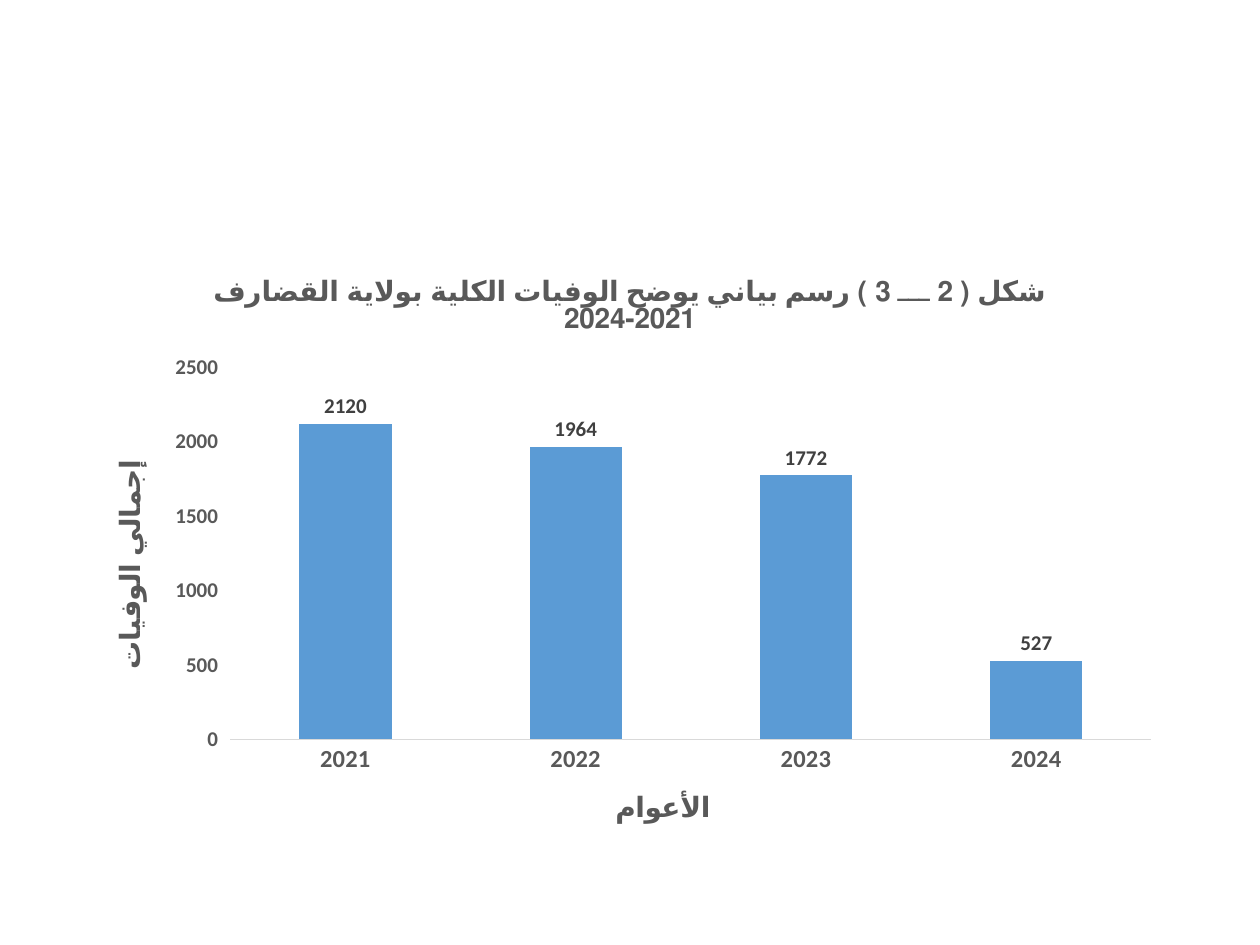
from pptx import Presentation
from pptx.chart.data import CategoryChartData
from pptx.dml.color import RGBColor
from pptx.enum.chart import XL_CHART_TYPE, XL_LABEL_POSITION, XL_TICK_MARK
from pptx.util import Inches, Pt


def style(font, size, color):
    font.name = "Calibri"
    font.size = Pt(size)
    font.bold = True
    font.color.rgb = RGBColor.from_string(color)


def label(title, text):
    para = title.text_frame.paragraphs[0]
    para.text = text
    para._p.get_or_add_pPr().set("rtl", "1")
    style(para.font, 16, "595959")
    style(para.runs[0].font, 16, "595959")


deck = Presentation()
deck.slide_width = Inches(10)
deck.slide_height = Inches(7.5)
slide = deck.slides.add_slide(deck.slide_layouts[6])

data = CategoryChartData()
data.categories = ["2021", "2022", "2023", "2024"]
data.add_series("Series 1", [2120, 1964, 1772, 527])
chart = slide.shapes.add_chart(
    XL_CHART_TYPE.COLUMN_CLUSTERED,
    Inches(0.69), Inches(2), Inches(8.62), Inches(4.76), data
).chart
chart.font.name = "Calibri"
chart.font.size = Pt(10)
chart.has_legend = False
chart.has_title = True
chart.chart_title.include_in_layout = False
label(chart.chart_title, "شكل ( 2 ـــ 3 ) رسم بياني يوضح الوفيات الكلية بولاية القضارف 2021-2024")

years = chart.category_axis
label(years.axis_title, "الأعوام")
style(years.tick_labels.font, 14, "595959")
years.major_tick_mark = XL_TICK_MARK.NONE
years.format.line.color.rgb = RGBColor.from_string("D9D9D9")
years.format.line.width = Pt(0.75)

deaths = chart.value_axis
label(deaths.axis_title, "إجمالي الوفيات")
style(deaths.tick_labels.font, 12, "595959")
deaths.has_major_gridlines = False
deaths.minimum_scale = 0
deaths.maximum_scale = 2500
deaths.major_unit = 500
deaths.major_tick_mark = XL_TICK_MARK.OUTSIDE
deaths.format.line.fill.background()

plot = chart.plots[0]
plot.gap_width = 150
plot.vary_by_categories = False
bars = plot.series[0]
bars.format.fill.solid()
bars.format.fill.fore_color.rgb = RGBColor.from_string("5B9BD5")
plot.has_data_labels = True
marks = plot.data_labels
marks.show_value = True
marks.position = XL_LABEL_POSITION.OUTSIDE_END
style(marks.font, 12, "404040")

deck.save("out.pptx")
